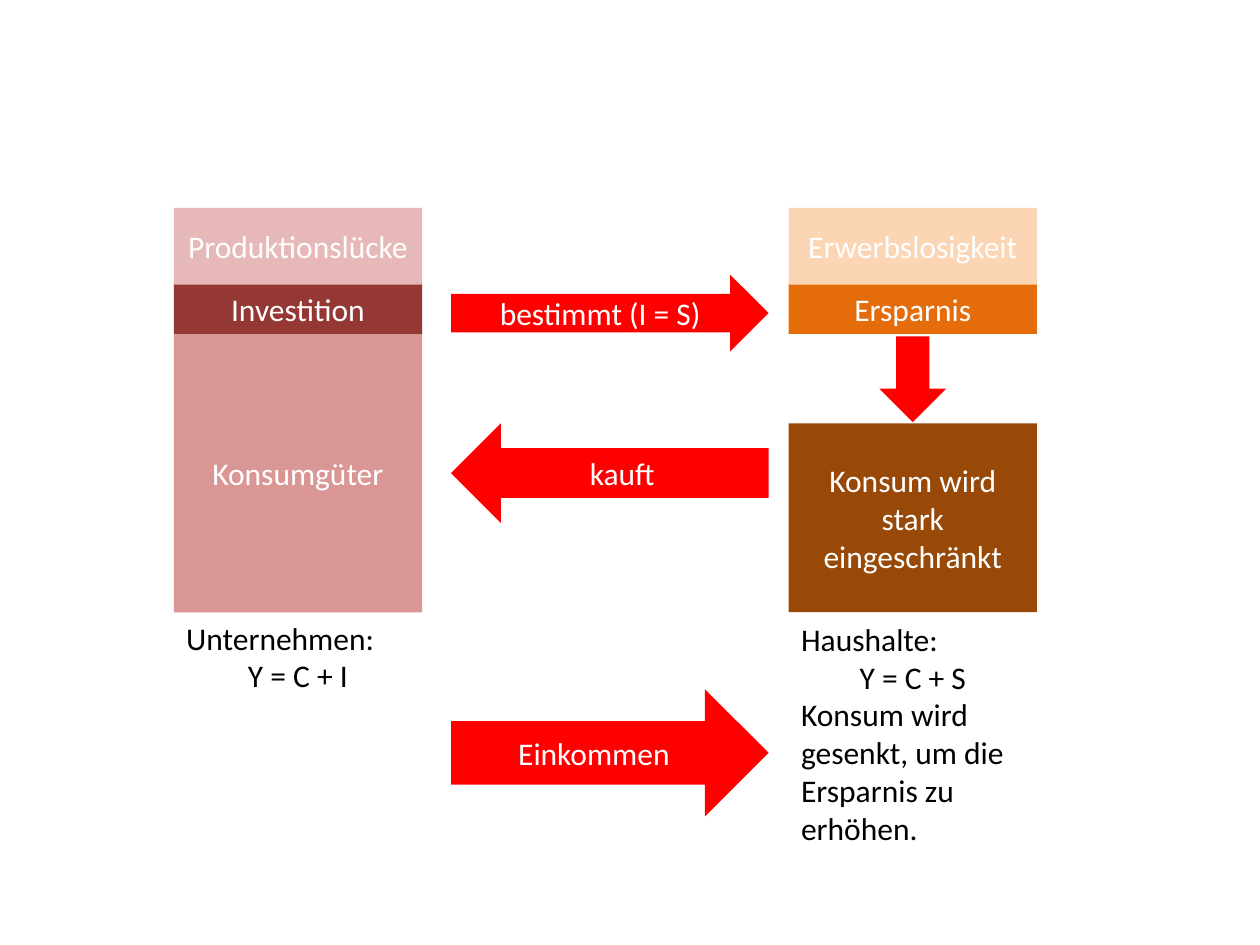
from pptx import Presentation
from pptx import util as u
from pptx.dml.color import RGBColor
from pptx.enum import shapes, text

WHITE = RGBColor(0xFF, 0xFF, 0xFF)
BLACK = RGBColor(0x00, 0x00, 0x00)
RED = RGBColor(0xFF, 0x00, 0x00)
ROSE_PALE = RGBColor(0xE6, 0xB9, 0xB8)
ROSE = RGBColor(0xD9, 0x96, 0x94)
ROSE_DARK = RGBColor(0x95, 0x37, 0x35)
ORANGE_PALE = RGBColor(0xFC, 0xD5, 0xB5)
ORANGE = RGBColor(0xE4, 0x6C, 0x0A)
BROWN = RGBColor(0x98, 0x48, 0x07)

SHAPE = shapes.MSO_SHAPE
LEFT, CENTER = text.PP_ALIGN.LEFT, text.PP_ALIGN.CENTER

# Two columns of equal width, with arrows in between
COLUMN_WIDTH = 1.97
FIRMS, HOUSEHOLDS = 1.38, 6.26
ARROW_LEFT, ARROW_WIDTH = 3.58, 2.52


class FlowSlide:
    font_format = {"name": "Calibri", "size": u.Pt(18)}

    def __init__(self, slide):
        self.slide = slide

    def set_text(self, frame, lines, color, anchor):
        frame_format = {"word_wrap": True, "vertical_anchor": anchor}
        for key, value in frame_format.items():
            setattr(frame, key, value)
        for i, (line, align) in enumerate(lines):
            paragraph = frame.add_paragraph() if i else frame.paragraphs[0]
            paragraph.alignment = align
            run = paragraph.add_run()
            run.text = line
            for key, value in self.font_format.items():
                setattr(run.font, key, value)
            run.font.color.rgb = color

    def block(self, kind, left, top, width, height, fill, label=None):
        block = self.slide.shapes.add_shape(
            kind, *map(u.Inches, (left, top, width, height)))
        block.shadow.inherit = False
        block.fill.solid()
        block.fill.fore_color.rgb = fill
        block.line.fill.background()
        if label:
            self.set_text(block.text_frame, [(label, CENTER)], WHITE,
                          text.MSO_ANCHOR.MIDDLE)

    def sector(self, left, parts):
        for label, top, height, fill in parts:
            self.block(SHAPE.RECTANGLE, left, top, COLUMN_WIDTH, height,
                       fill, label)

    def flow(self, kind, top, height, label):
        self.block(kind, ARROW_LEFT, top, ARROW_WIDTH, height, RED, label)

    def caption(self, left, top, height, lines):
        caption = self.slide.shapes.add_textbox(
            *map(u.Inches, (left, top, COLUMN_WIDTH, height)))
        self.set_text(caption.text_frame, lines, BLACK, text.MSO_ANCHOR.TOP)
        caption.text_frame.auto_size = text.MSO_AUTO_SIZE.SHAPE_TO_FIT_TEXT


def main():
    deck = Presentation()
    deck.slide_width, deck.slide_height = u.Inches(10), u.Inches(7.5)
    page = FlowSlide(deck.slides.add_slide(deck.slide_layouts[6]))

    # Firms
    page.sector(FIRMS, [
        ("Konsumgüter", 2.65, 2.21, ROSE),
        ("Investition", 2.25, 0.4, ROSE_DARK),
        ("Produktionslücke", 1.65, 0.61, ROSE_PALE),
    ])
    page.caption(FIRMS, 4.86, 0.71, [
        ("Unternehmen:", LEFT), ("Y = C + I", CENTER)])

    # Households
    page.sector(HOUSEHOLDS, [
        ("Konsum wird stark eingeschränkt", 3.36, 1.5, BROWN),
        ("Ersparnis", 2.25, 0.4, ORANGE),
        ("Erwerbslosigkeit", 1.65, 0.61, ORANGE_PALE),
    ])
    page.caption(HOUSEHOLDS, 4.87, 1.92, [
        ("Haushalte:", LEFT), ("Y = C + S", CENTER),
        ("Konsum wird gesenkt, um die Ersparnis zu erhöhen.", LEFT)])

    # Flows between and within the sectors
    page.flow(SHAPE.RIGHT_ARROW, 2.18, 0.61, "bestimmt (I = S)")
    page.flow(SHAPE.LEFT_ARROW, 3.36, 0.79, "kauft")
    page.flow(SHAPE.RIGHT_ARROW, 5.47, 1.01, "Einkommen")
    page.block(SHAPE.DOWN_ARROW, 6.98, 2.67, 0.53, 0.68, RED)

    deck.save("out.pptx")


if __name__ == "__main__":
    main()
